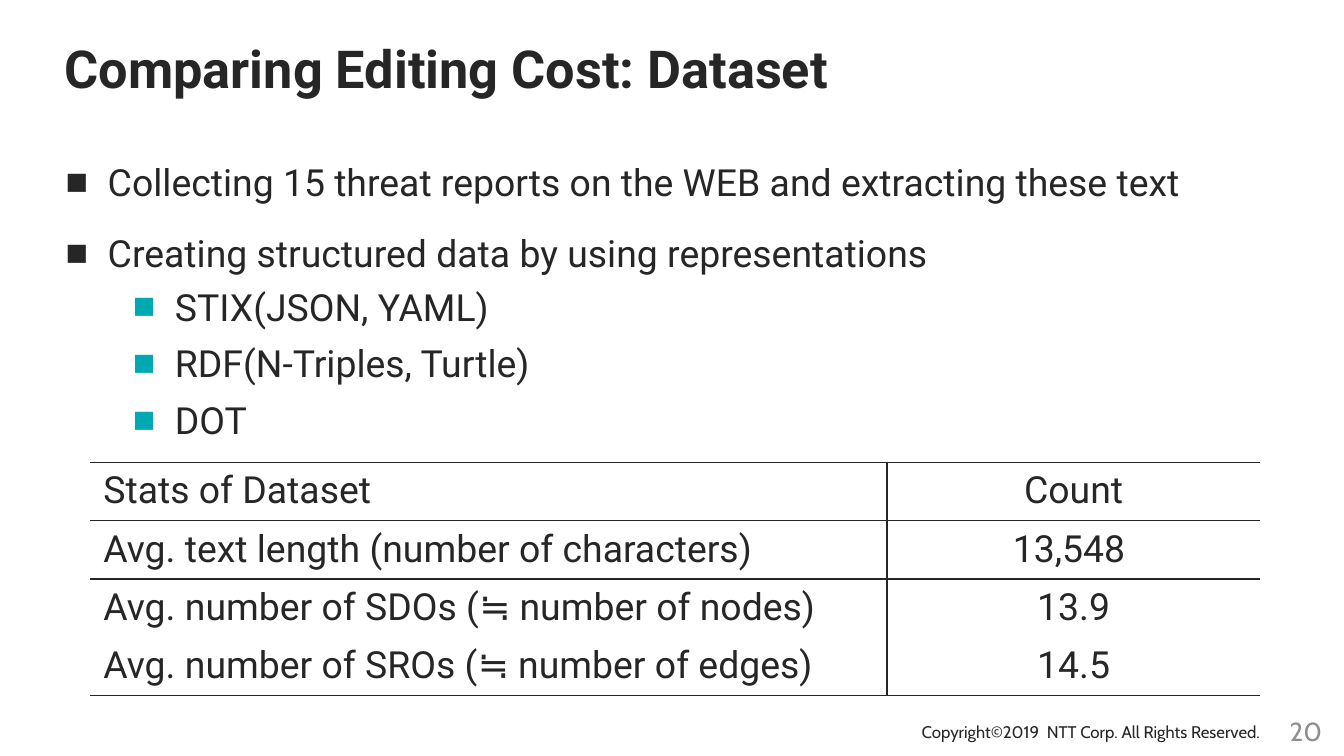
import dataclasses

import lxml.etree
import pptx
import pptx.dml.color
import pptx.enum.text
import pptx.oxml.ns
import pptx.util

Pt = pptx.util.Pt
Align = pptx.enum.text.PP_ALIGN
Anchor = pptx.enum.text.MSO_ANCHOR


@dataclasses.dataclass(frozen=True)
class Theme:
    ink: str = "262626"
    accent: str = "00A9B2"
    muted: str = "8E8E8E"
    text_font: str = "Roboto"
    footer_font: str = "Cabin"
    title_size: float = 28
    body_size: float = 20
    number_size: float = 14
    copyright_size: float = 9
    rule_width: float = 1


THEME = Theme()

BULLETS = [
    (0, "Collecting 15 threat reports on the WEB and extracting these text"),
    (0, "Creating structured data by using representations"),
    (1, "STIX(JSON, YAML)"),
    (1, "RDF(N-Triples, Turtle)"),
    (1, "DOT"),
]

LEVELS = [
    {"indent": 58.5, "spacing": {"space_before": Pt(12), "space_after": Pt(0)},
     "left": 22.5, "bullet": THEME.ink},
    {"indent": 58.5, "spacing": {"space_before": Pt(2), "space_after": Pt(2)},
     "left": 58.5, "bullet": THEME.accent},
]
HANGING = 22.5

STATISTICS = [
    ("Stats of Dataset", "Count"),
    ("Avg. text length (number of characters)", "13,548 "),
    ("Avg. number of SDOs (≒ number of nodes)", "13.9"),
    ("Avg. number of SROs (≒ number of edges)", "14.5"),
]
RULED_EDGES = {0, 1, 2, 4}


def apply_format(target, values):
    for name, value in values.items():
        setattr(target, name, value)


def place(shape, box):
    names = ("left", "top", "width", "height")
    apply_format(shape, dict(zip(names, map(Pt, box))))


def write(paragraph, text, size, color=THEME.ink, font=THEME.text_font, bold=False):
    run = paragraph.add_run()
    run.text = text
    apply_format(run.font, {"name": font, "size": Pt(size), "bold": bold})
    run.font.color.rgb = pptx.dml.color.RGBColor.from_string(color)


def add_element(parent, tag, **attributes):
    return lxml.etree.SubElement(parent, pptx.oxml.ns.qn(tag), attributes)


def add_color(parent, color):
    add_element(parent, "a:srgbClr", val=color)


def add_bullet(paragraph, left, color):
    properties = paragraph._p.get_or_add_pPr()
    properties.set("marL", str(Pt(left)))
    properties.set("indent", str(-Pt(HANGING)))
    add_color(add_element(properties, "a:buClr"), color)
    add_element(properties, "a:buChar", char="■")


def set_borders(cell, ruled):
    properties = cell._tc.get_or_add_tcPr()
    for side in "LRTB":
        line = add_element(properties, f"a:ln{side}", w=str(Pt(THEME.rule_width)))
        if side in ruled:
            add_color(add_element(line, "a:solidFill"), THEME.ink)
        else:
            add_element(line, "a:noFill")


def fill_title(shape, box):
    place(shape, box)
    frame = shape.text_frame
    apply_format(frame, {"vertical_anchor": Anchor.TOP, "word_wrap": True,
                         "auto_size": pptx.enum.text.MSO_AUTO_SIZE.NONE})
    paragraph = frame.paragraphs[0]
    paragraph.alignment = Align.LEFT
    write(paragraph, "Comparing Editing Cost: Dataset", THEME.title_size, bold=True)


def fill_bullets(shape, box):
    place(shape, box)
    frame = shape.text_frame
    apply_format(frame, {"vertical_anchor": Anchor.TOP, "word_wrap": True,
                         "auto_size": pptx.enum.text.MSO_AUTO_SIZE.NONE})
    for index, (level, text) in enumerate(BULLETS):
        paragraph = frame.add_paragraph() if index else frame.paragraphs[0]
        style = LEVELS[level]
        add_bullet(paragraph, style["left"], style["bullet"])
        apply_format(paragraph, {"level": level, "line_spacing": 1.1, **style["spacing"]})
        if index == 0:
            paragraph.space_before = Pt(0)
        write(paragraph, text, THEME.body_size)


def add_statistics(slide, box):
    left, top, width, height = box
    count_width = 200
    frame = slide.shapes.add_table(len(STATISTICS), 2, *map(Pt, box))
    table = frame.table
    apply_format(table, {"first_row": False, "horz_banding": False})
    for column, column_width in zip(table.columns, (width - count_width, count_width)):
        column.width = Pt(column_width)
    for row_index, values in enumerate(STATISTICS):
        table.rows[row_index].height = Pt(height / len(STATISTICS))
        edges = "T" if row_index in RULED_EDGES else ""
        edges += "B" if row_index + 1 in RULED_EDGES else ""
        for column_index, text in enumerate(values):
            cell = table.cell(row_index, column_index)
            set_borders(cell, edges + "RL"[column_index])
            cell.fill.background()
            paragraph = cell.text_frame.paragraphs[0]
            paragraph.alignment = (Align.LEFT, Align.CENTER)[column_index]
            write(paragraph, text, THEME.body_size)


def add_footer(slide, box):
    left, top, width, height = box
    number_width = 36.7
    parts = [
        ("Copyright©2019  NTT Corp. All Rights Reserved.", (left, top + 5.8, 197.3, 18),
         THEME.copyright_size, THEME.ink, Align.LEFT, Anchor.TOP, False),
        ("20", (left + width - number_width, top, number_width, height),
         THEME.number_size, THEME.muted, Align.CENTER, Anchor.MIDDLE, True),
    ]
    for text, part_box, size, color, alignment, anchor, wrap in parts:
        frame = slide.shapes.add_textbox(*map(Pt, part_box)).text_frame
        apply_format(frame, {"word_wrap": wrap, "vertical_anchor": anchor})
        paragraph = frame.paragraphs[0]
        paragraph.alignment = alignment
        write(paragraph, text, size, color, THEME.footer_font)


def build_dataset_slide(presentation):
    slide = presentation.slides.add_slide(presentation.slide_layouts[1])
    add_footer(slide, (486.7, 377.3, 231.2, 28.8))
    fill_title(slide.shapes.title, (27.4, 15.8, 546.5, 37.4))
    fill_bullets(slide.placeholders[1], (28, 79.2, 665.3, 289.4))
    add_statistics(slide, (48.2, 247.7, 627, 123.4))


def main():
    presentation = pptx.Presentation()
    apply_format(presentation, {"slide_width": Pt(720), "slide_height": Pt(405)})
    build_dataset_slide(presentation)
    presentation.save("out.pptx")


if __name__ == "__main__":
    main()
